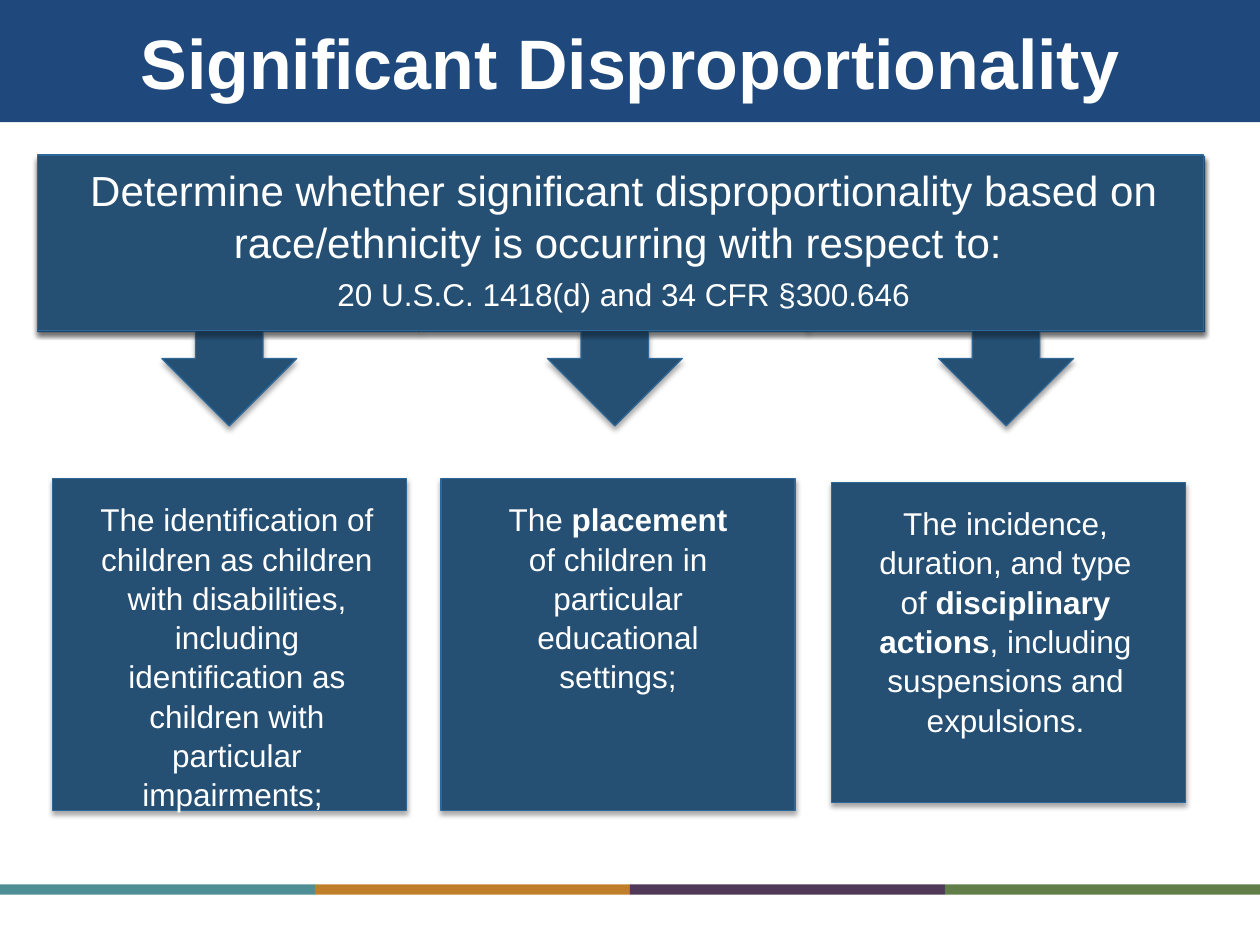
from lxml.etree import SubElement
from pptx import Presentation
from pptx.dml.color import RGBColor
from pptx.enum.shapes import MSO_SHAPE
from pptx.enum.text import MSO_ANCHOR, MSO_AUTO_SIZE, PP_ALIGN
from pptx.oxml.ns import qn
from pptx.util import Pt

WHITE = RGBColor(0xFF, 0xFF, 0xFF)
BLACK = RGBColor(0x00, 0x00, 0x00)
NAVY = RGBColor(0x1F, 0x49, 0x7D)
STEEL = RGBColor(0x25, 0x4F, 0x73)
EDGE = RGBColor(0x2D, 0x68, 0x99)
BANDS = [
    RGBColor(0x4E, 0x8E, 0x94),
    RGBColor(0xC1, 0x7E, 0x2A),
    RGBColor(0x4F, 0x38, 0x58),
    RGBColor(0x61, 0x7E, 0x48),
]
WIDE = 720
ARROWS = [(21.6, 218.9), (241.2, 220.3), (461.5, 226.8)]
CARDS = [
    ((30.2, 273.6, 202.3, 189.4), (49, 281.5, 172.8, 97.2),
     [("The identification of children as children with disabilities, "
       "including identification as children with particular impairments; ", False)]),
    ((252, 273.6, 202.3, 189.4), (277.2, 281.5, 151.9, 97.9),
     [("The ", False), ("placement", True),
      (" of children in particular educational settings;", False)]),
    ((475.2, 275.8, 202.3, 182.9), (488.2, 283.7, 172.8, 96.5),
     [("The incidence, duration, and type of ", False),
      ("disciplinary actions", True),
      (", including suspensions and expulsions.", False)]),
]


def place(shape, box):
    shape.left, shape.top, shape.width, shape.height = map(Pt, box)


def paint(shape, color):
    shape.fill.solid()
    shape.fill.fore_color.rgb = color


def add_band(slide, box, color):
    band = slide.shapes.add_shape(MSO_SHAPE.RECTANGLE, *map(Pt, box))
    band.shadow.inherit = False
    paint(band, color)
    band.line.fill.background()


def add_panel(slide, kind, box):
    panel = slide.shapes.add_shape(kind, *map(Pt, box))
    panel.shadow.inherit = False
    paint(panel, STEEL)
    panel.line.color.rgb = EDGE
    panel.line.width = Pt(0.75)
    effect = panel.element.spPr.find(qn("a:effectLst"))
    shade = SubElement(effect, qn("a:outerShdw"), blurRad=str(Pt(3.1)),
                       dist=str(Pt(1.8)), dir="5400000", rotWithShape="0")
    color = SubElement(shade, qn("a:srgbClr"), val=str(BLACK))
    SubElement(color, qn("a:alpha"), val="35000")


def style(para, size, bold=None):
    para.alignment = PP_ALIGN.CENTER
    font = para.font
    font.name = "Arial"
    font.size = Pt(size)
    font.bold = bold
    font.color.rgb = WHITE


def add_title(slide):
    title = slide.shapes.title
    place(title, (0, 0, WIDE, 69.8))
    paint(title, NAVY)
    frame = title.text_frame
    frame.text = "Significant Disproportionality"
    frame.vertical_anchor = MSO_ANCHOR.MIDDLE
    style(frame.paragraphs[0], 40, True)


def add_lead(slide):
    body = slide.placeholders[1]
    place(body, (24.5, 89.3, 663.8, 94.3))
    body.element.getparent().append(body.element)
    frame = body.text_frame
    frame.auto_size = MSO_AUTO_SIZE.NONE
    frame.text = ("Determine whether significant disproportionality based on "
                  "race/ethnicity is occurring with respect to: \n"
                  "20 U.S.C. 1418(d) and 34 CFR §300.646")
    for para, size in zip(frame.paragraphs, (24, 18)):
        para.line_spacing = 1.04
        style(para, size)
        props = para._p.get_or_add_pPr()
        props.set("marL", "0")
        props.set("indent", "0")
        props.insert_element_before(
            props.makeelement(qn("a:buNone")), "a:tabLst", "a:defRPr", "a:extLst")


def add_note(slide, box, parts):
    frame = slide.shapes.add_textbox(*map(Pt, box)).text_frame
    frame.word_wrap = True
    para = frame.paragraphs[0]
    para.line_spacing = 1.04
    style(para, 18)
    for text, bold in parts:
        run = para.add_run()
        run.text = text
        if bold:
            run.font.bold = True


def main():
    deck = Presentation()
    deck.slide_width, deck.slide_height = Pt(WIDE), Pt(540)
    slide = deck.slides.add_slide(deck.slide_layouts[1])
    step = WIDE / len(BANDS)
    for i, color in enumerate(BANDS):
        add_band(slide, (i * step, 505.4, step, 5.8), color)
    add_title(slide)
    for left, width in ARROWS:
        add_panel(slide, MSO_SHAPE.DOWN_ARROW_CALLOUT, (left, 89.3, width, 154.1))
    add_panel(slide, MSO_SHAPE.RECTANGLE, (21.6, 88.6, 666, 100.1))
    add_lead(slide)
    for card, _, _ in CARDS:
        add_panel(slide, MSO_SHAPE.RECTANGLE, card)
    for _, note, parts in CARDS:
        add_note(slide, note, parts)
    deck.save("out.pptx")


if __name__ == "__main__":
    main()
